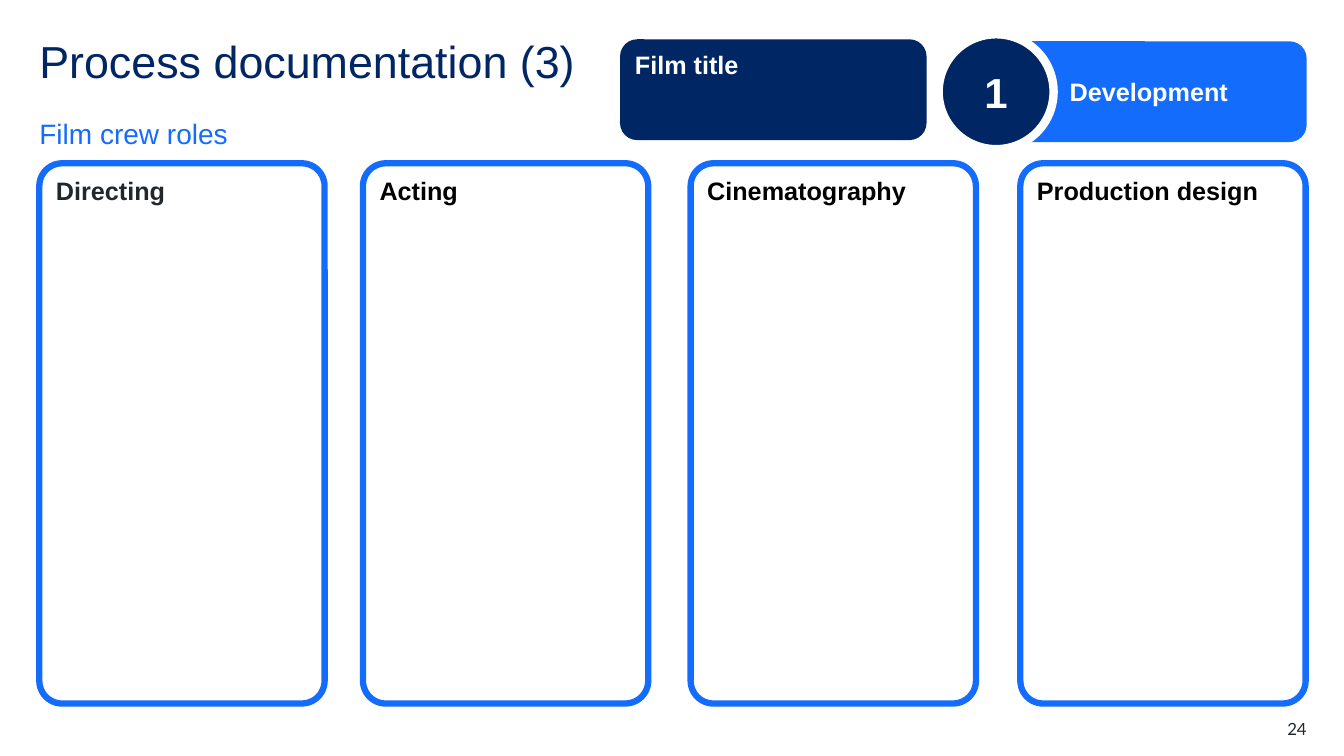
from pptx import Presentation
from pptx.dml.color import RGBColor
from pptx.enum.shapes import MSO_SHAPE
from pptx.enum.text import MSO_ANCHOR, PP_ALIGN
from pptx.util import Inches, Pt

ROUND, OVAL = MSO_SHAPE.ROUNDED_RECTANGLE, MSO_SHAPE.OVAL
TOP, MIDDLE = MSO_ANCHOR.TOP, MSO_ANCHOR.MIDDLE
LEFT, CENTER, RIGHT = PP_ALIGN.LEFT, PP_ALIGN.CENTER, PP_ALIGN.RIGHT

NAVY = RGBColor(0x00, 0x26, 0x64)
BLUE = RGBColor(0x14, 0x6C, 0xFD)
INK = RGBColor(0x22, 0x27, 0x2B)
BLACK = RGBColor(0x00, 0x00, 0x00)
WHITE = RGBColor(0xFF, 0xFF, 0xFF)

ROLES = [
    ("Directing", 0.39, INK),
    ("Acting", 3.6, BLACK),
    ("Cinematography", 6.85, BLACK),
    ("Production design", 10.12, BLACK),
]


def write(shape, text, size, color, bold=False, align=LEFT, anchor=TOP, font="Arial"):
    frame = shape.text_frame
    frame.word_wrap = True
    frame.vertical_anchor = anchor
    frame.text = text
    para = frame.paragraphs[0]
    para.alignment = align
    style = para.runs[0].font
    style.name = font
    style.size = Pt(size)
    style.bold = bold
    style.color.rgb = color
    return para


def add_label(slide, box, text, size, color, **style):
    label = slide.shapes.add_textbox(*map(Inches, box))
    frame = label.text_frame
    frame.margin_left = frame.margin_right = 0
    frame.margin_top = frame.margin_bottom = 0
    return write(label, text, size, color, **style)


def add_panel(slide, kind, box, fill, line=None, width=0, corner=None):
    panel = slide.shapes.add_shape(kind, *map(Inches, box))
    panel.shadow.inherit = False
    panel.fill.solid()
    panel.fill.fore_color.rgb = fill
    if line is None:
        panel.line.fill.background()
    else:
        panel.line.color.rgb = line
        panel.line.width = Pt(width)
    if corner is not None:
        panel.adjustments[0] = corner
    return panel


def add_header(slide):
    title = add_label(slide, (0.39, 0.39, 5.63, 0.6), "Process documentation (3)", 32, NAVY)
    title.line_spacing = 0.9
    topic = add_label(slide, (0.39, 1.07, 5.63, 0.34), "Film crew roles", 20, BLUE, anchor=MIDDLE)
    topic.line_spacing = 1.5
    topic.space_after = Pt(12)
    film = add_panel(slide, ROUND, (6.15, 0.39, 3.04, 1), NAVY, corner=0.17)
    write(film, "Film title", 18, WHITE, bold=True)


def add_stage(slide):
    stage = add_panel(slide, ROUND, (10.06, 0.41, 2.9, 1), BLUE, corner=0.17)
    write(stage, "Development", 18, WHITE, bold=True, anchor=MIDDLE)
    stage.text_frame.margin_left = Inches(0.5)
    badge = add_panel(slide, OVAL, (9.31, 0.34, 1.14, 1.14), NAVY, WHITE, 6)
    write(badge, "1", 30, WHITE, bold=True, align=CENTER, anchor=MIDDLE)


def add_roles(slide):
    for name, left, color in ROLES:
        role = add_panel(slide, ROUND, (left, 1.62, 2.83, 5.36), WHITE, BLUE, 4.5, 0.08)
        write(role, name, 18, color, bold=True)


def main():
    deck = Presentation()
    deck.slide_width = Inches(13.33)
    deck.slide_height = Inches(7.5)
    slide = deck.slides.add_slide(deck.slide_layouts[6])
    add_header(slide)
    add_stage(slide)
    add_roles(slide)
    add_label(slide, (12.17, 7.13, 0.79, 0.2), "24", 12, INK, align=RIGHT, font="Lato")
    deck.save("out.pptx")


if __name__ == "__main__":
    main()
